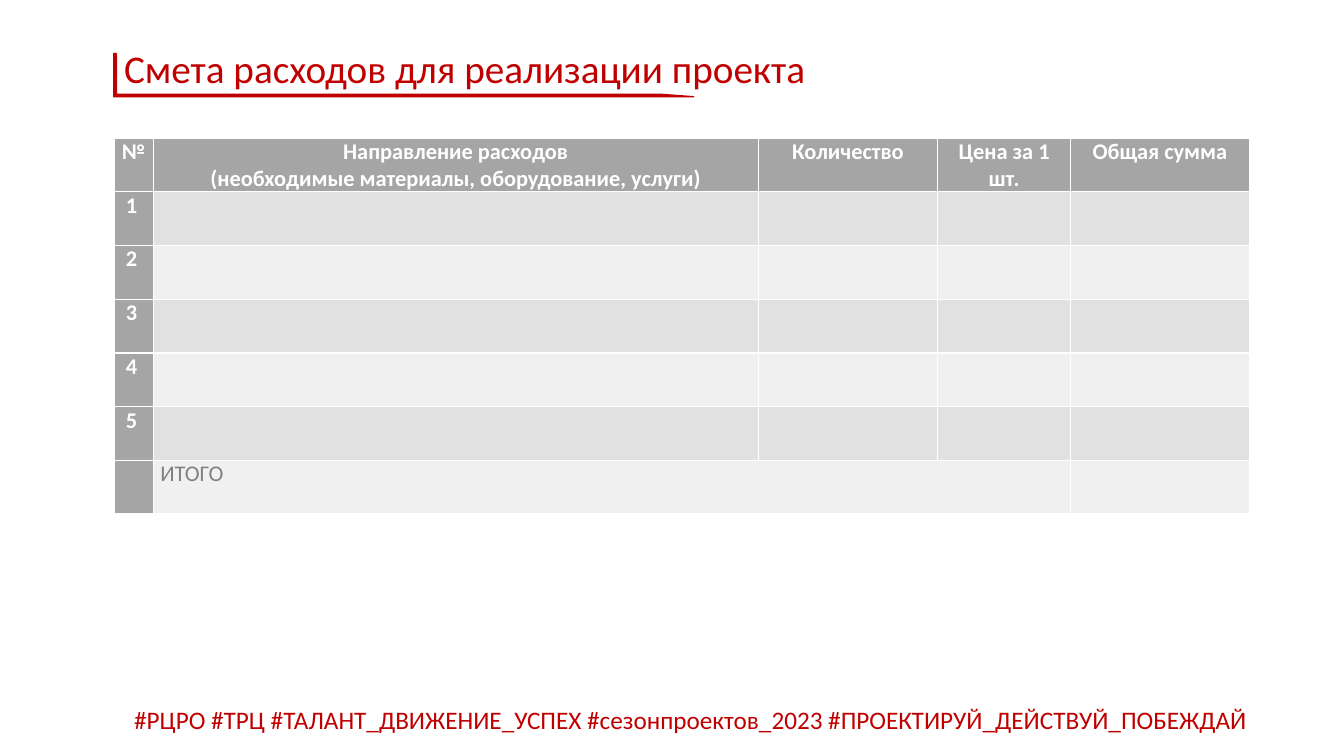
"""Builds the project budget slide with its expense table."""
import pptx
import pptx.dml.color
import pptx.enum.shapes
import pptx.enum.text
import pptx.util

Inches = pptx.util.Inches
Pt = pptx.util.Pt
RGBColor = pptx.dml.color.RGBColor
Align = pptx.enum.text.PP_ALIGN
Anchor = pptx.enum.text.MSO_ANCHOR

RED = RGBColor(0xC0, 0x00, 0x00)
WHITE = RGBColor(0xFF, 0xFF, 0xFF)
HEADER_GRAY = RGBColor(0xA5, 0xA5, 0xA5)
ODD_GRAY = RGBColor(0xE1, 0xE1, 0xE1)
EVEN_GRAY = RGBColor(0xF0, 0xF0, 0xF0)
TEXT_GRAY = RGBColor(0x80, 0x80, 0x80)

LEFT = 1.13
HEADINGS = [
    "№",
    "Направление расходов\n(необходимые материалы, оборудование, услуги)",
    "Количество",
    "Цена за 1 шт.",
    "Общая сумма",
]
COLUMN_WIDTHS = [0.39, 6, 1.78, 1.32, 1.77]
ITEM_COUNT = 5
TABLE_HEIGHT = 3.73
HASHTAGS = ("#РЦРО #ТРЦ #ТАЛАНТ_ДВИЖЕНИЕ_УСПЕХ #сезонпроектов_2023 "
            "#ПРОЕКТИРУЙ_ДЕЙСТВУЙ_ПОБЕЖДАЙ")


def format_paragraph(paragraph, size, color, alignment, bold=False):
    """Set the font and alignment of a paragraph."""
    font = paragraph.font
    font.name = "Calibri"
    font.size = Pt(size)
    font.bold = bold
    font.color.rgb = color
    paragraph.alignment = alignment


def add_title(slide):
    """Place the title in its placeholder."""
    title = slide.shapes.title
    title.left, title.top = Inches(LEFT), Inches(0.39)
    title.width, title.height = Inches(9.59), Inches(0.57)
    frame = title.text_frame
    frame.text = "Смета расходов для реализации проекта"
    frame.auto_size = pptx.enum.text.MSO_AUTO_SIZE.NONE
    frame.vertical_anchor = Anchor.TOP
    format_paragraph(frame.paragraphs[0], 28, RED, Align.LEFT)


def add_hashtags(slide):
    """Add the line of hashtags at the bottom."""
    box = slide.shapes.add_textbox(
        Inches(LEFT), Inches(6.96), Inches(11.44), Inches(0.38))
    frame = box.text_frame
    frame.word_wrap = True
    frame.vertical_anchor = Anchor.BOTTOM
    frame.text = HASHTAGS
    paragraph = frame.paragraphs[0]
    paragraph.line_spacing = 0.9
    format_paragraph(paragraph, 18, RED, Align.CENTER)


def add_title_corner(slide):
    """Add the thin red corner around the title."""
    corner = slide.shapes.add_shape(
        pptx.enum.shapes.MSO_SHAPE.HALF_FRAME,
        Inches(3.79), Inches(-2.13), Inches(0.43), Inches(5.75))
    corner.rotation = 270
    corner.adjustments[0] = corner.adjustments[1] = 0.055
    corner.shadow.inherit = False
    corner.fill.solid()
    corner.fill.fore_color.rgb = RED
    corner.line.color.rgb = RED
    corner.line.width = Pt(1)


def fill_cell(cell, color):
    """Give a cell a solid fill."""
    cell.fill.solid()
    cell.fill.fore_color.rgb = color


def write_cell(cell, text, color, alignment, bold=True, indent=0.07):
    """Write formatted text in a cell with narrow margins."""
    cell.margin_left, cell.margin_right = Inches(indent), Inches(0.07)
    cell.margin_top = cell.margin_bottom = Inches(0)
    cell.text = text
    for paragraph in cell.text_frame.paragraphs:
        format_paragraph(paragraph, 16, color, alignment, bold)


def add_budget_table(slide):
    """Add the expense table with numbered rows and a total row."""
    row_count = ITEM_COUNT + 2
    total_row = row_count - 1
    table = slide.shapes.add_table(
        row_count, len(HEADINGS), Inches(LEFT), Inches(1.37),
        Inches(sum(COLUMN_WIDTHS)), Inches(TABLE_HEIGHT)).table
    table.first_col = True
    for column, width in zip(table.columns, COLUMN_WIDTHS):
        column.width = Inches(width)
    for row_index, row in enumerate(table.rows):
        band = ODD_GRAY if row_index % 2 else EVEN_GRAY
        for column_index, cell in enumerate(row.cells):
            is_heading = row_index == 0 or column_index == 0
            fill_cell(cell, HEADER_GRAY if is_heading else band)
    for column_index, heading in enumerate(HEADINGS):
        write_cell(table.cell(0, column_index), heading, WHITE, Align.CENTER)
    for number in range(1, ITEM_COUNT + 1):
        write_cell(table.cell(number, 0), str(number), WHITE, Align.LEFT,
                   indent=0.12)
    total = table.cell(total_row, 1)
    total.merge(table.cell(total_row, 3))
    write_cell(total, "ИТОГО", TEXT_GRAY, Align.LEFT, bold=False)


def main():
    """Build and save the presentation."""
    presentation = pptx.Presentation()
    presentation.slide_width = Inches(13.33)
    presentation.slide_height = Inches(7.5)
    slide = presentation.slides.add_slide(presentation.slide_layouts[5])
    add_title(slide)
    add_hashtags(slide)
    add_title_corner(slide)
    add_budget_table(slide)
    presentation.save("out.pptx")


if __name__ == "__main__":
    main()
